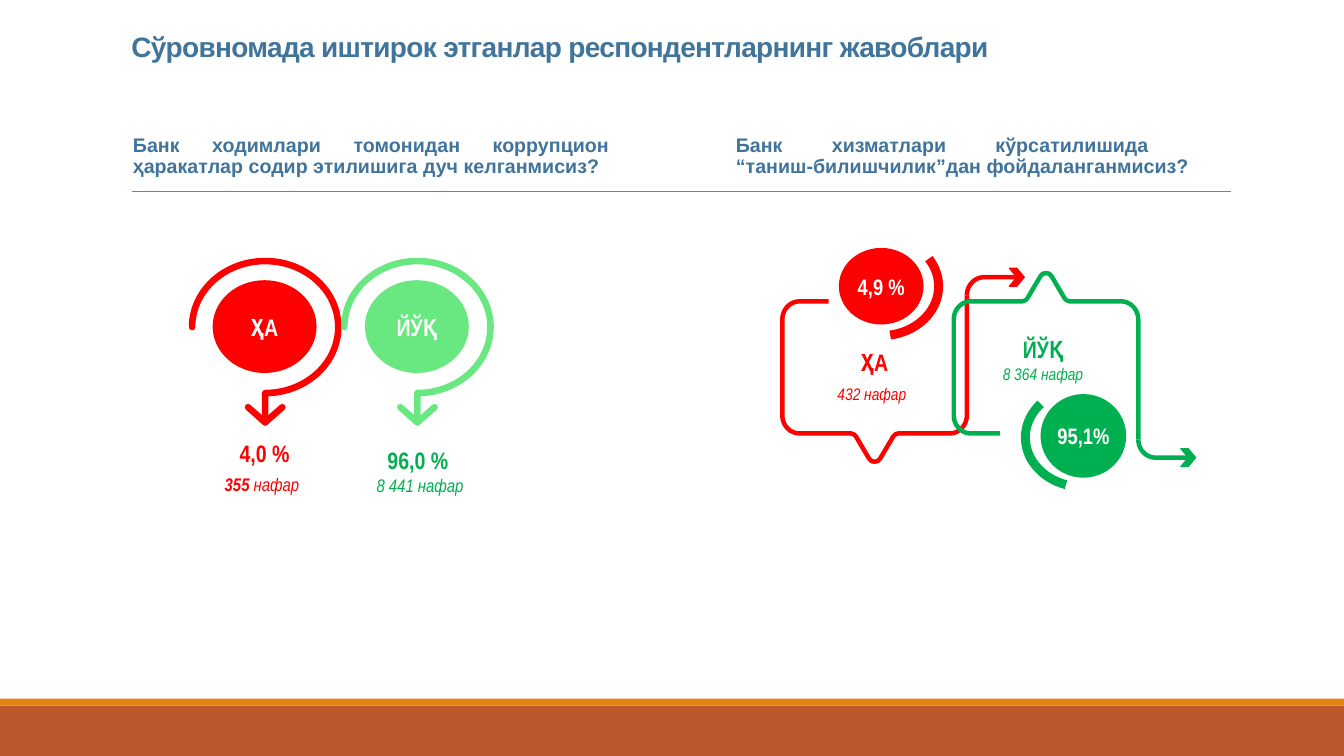
import math
from dataclasses import dataclass

import pptx
import pptx.dml.color
import pptx.enum.shapes
import pptx.enum.text
import pptx.oxml
import pptx.oxml.ns
import pptx.util


@dataclass(frozen=True)
class Theme:
    heading: str = "40749B"
    yes: str = "FF0000"
    no: str = "00B050"
    no_light: str = "69E781"
    white: str = "FFFFFF"
    rule: str = "808080"
    band: str = "BD582C"
    stripe: str = "E48312"
    sans: str = "Arial"
    narrow: str = "Arial Narrow"
    title: float = 20
    question: float = 14
    answer: float = 17
    share: float = 16
    count: float = 13
    count_small: float = 12


theme = Theme()
inch = pptx.util.Inches
rgb = pptx.dml.color.RGBColor.from_string
preset = pptx.enum.shapes.MSO_SHAPE
align = pptx.enum.text.PP_ALIGN
anchor = pptx.enum.text.MSO_ANCHOR

deck = pptx.Presentation()
deck.slide_width, deck.slide_height = inch(13.33), inch(7.5)
W, H = deck.slide_width, deck.slide_height
slide = deck.slides.add_slide(deck.slide_layouts[5])
shapes = slide.shapes


def arc(cx, cy, rx, ry, start, end, steps=24):
    """Points along an ellipse; degrees run clockwise from the right."""
    angles = [math.radians(start + (end - start) * i / steps) for i in range(steps + 1)]
    return [(cx + rx * math.cos(a), cy + ry * math.sin(a)) for a in angles]


def trace(contours, color, width, cap="flat"):
    """Draw open contours, given in inches, as one stroked freeform."""
    contours = [[(inch(x), inch(y)) for x, y in points] for points in contours]
    builder = shapes.build_freeform(*contours[0][0])
    for number, points in enumerate(contours):
        if number:
            builder.move_to(*points[0])
        builder.add_line_segments(points[1:], close=False)
    stroke = builder.convert_to_shape()
    stroke.shadow.inherit = False
    stroke.fill.background()
    stroke.line.color.rgb = rgb(color)
    stroke.line.width = pptx.util.Pt(width)
    stroke._element.spPr.find(pptx.oxml.ns.qn("a:ln")).set("cap", cap)


# Footer bands
for top, height, color in ((14 / 15, 1 / 15, theme.band), (0.924, 0.0093, theme.stripe)):
    band = shapes.add_shape(preset.RECTANGLE, 0, int(H * top), W, int(H * height))
    band.shadow.inherit = False
    band.fill.solid()
    band.fill.fore_color.rgb = rgb(color)
    band.line.fill.background()

# Rule under the questions
rule = shapes.add_connector(pptx.enum.shapes.MSO_CONNECTOR.STRAIGHT,
                            inch(1.31), inch(1.9), inch(12.21), inch(1.9))
rule.line.color.rgb = rgb(theme.rule)
rule.line.width = pptx.util.Pt(0.5)
rule._element.spPr.append(pptx.oxml.parse_xml(
    f'<a:effectLst {pptx.oxml.ns.nsdecls("a")}/>'))

# Title
title = shapes.title
title.left, title.top, title.width, title.height = map(inch, (-0.2, -0.08, 11.5, 0.76))
title.text_frame.auto_size = pptx.enum.text.MSO_AUTO_SIZE.NONE
title.text_frame.vertical_anchor = anchor.BOTTOM
heading = title.text_frame.paragraphs[0]
heading.alignment = align.CENTER
heading.line_spacing = 0.85
heading_run = heading.add_run()
heading_run.text = "Сўровномада иштирок этганлар респондентларнинг жавоблари"
heading_run.font.size = pptx.util.Pt(theme.title)
heading_run.font.name = theme.sans
heading_run.font.bold = True
heading_run.font.color.rgb = rgb(theme.heading)
heading_run._r.get_or_add_rPr().set("spc", "-50")

# Left question: rings that end in a down arrow
ring_x, ring_y, ring_pitch = 2.63, 3.245, 1.51
for column, color in enumerate((theme.yes, theme.no_light)):
    cx = ring_x + column * ring_pitch
    tip = (cx, 4.19)
    ring = arc(cx, ring_y, 0.725, 0.655, 180, 450, 72)
    trace([ring + [tip], [(cx - 0.17, 4.04), tip, (cx + 0.17, 4.04)]], color, 4.7, "rnd")

# Right question: speech frames, the second one shifted and turned upside down
bubble_pitch, mirror_sum = 1.7, 7.29
pointer_x = 8.675
pointer_half = [(8.44, 4.3), (8.47, 4.31), (8.49, 4.33), (8.62, 4.55), (8.645, 4.575)]
pointer = (pointer_half + [(pointer_x, 4.58)]
           + [(2 * pointer_x - x, y) for x, y in reversed(pointer_half)])
frame = ([(8.22, 2.99)] + arc(7.93, 3.17, 0.17, 0.18, 270, 180)
         + arc(7.93, 4.12, 0.17, 0.18, 180, 90) + pointer
         + arc(9.42, 4.12, 0.17, 0.18, 90, 0) + [(9.59, 2.93)])
hook = arc(9.76, 2.93, 0.17, 0.18, 180, 270) + [(10.08, 2.75)]
for column, color in enumerate((theme.yes, theme.no)):
    for part in (frame, hook):
        trace([[(x + column * bubble_pitch, mirror_sum - y if column else y)
                for x, y in part]], color, 3.21)
    arrow_y = mirror_sum - 2.75 if column else 2.75
    arrowhead = shapes.add_shape(preset.CHEVRON, inch(10.01 + column * bubble_pitch),
                                 inch(arrow_y - 0.09), inch(0.15), inch(0.18))
    arrowhead.adjustments[0] = 0.5
    arrowhead.shadow.inherit = False
    arrowhead.fill.solid()
    arrowhead.fill.fore_color.rgb = rgb(color)
    arrowhead.line.color.rgb = rgb(color)
    arrowhead.line.width = pptx.util.Pt(0.75)

# Arcs beside the share discs
trace([arc(8.74, 2.84, 0.57, 0.49, -34, 81)], theme.yes, 6.42)
trace([arc(10.74, 4.34, 0.57, 0.49, 107, 223)], theme.no, 6.42)

# Discs: left, top, width, height, fill, text, size
discs = [
    (2.11, 2.78, 1.03, 0.92, theme.yes, "ҲА", theme.answer),
    (2.11 + ring_pitch, 2.78, 1.03, 0.92, theme.no_light, "ЙЎҚ", theme.answer),
    (8.32, 2.46, 0.84, 0.76, theme.yes, "4,9 %", theme.share),
    (10.32, 3.91, 0.85, 0.83, theme.no, "95,1%", theme.share),
]

# Texts: box, fill, font, colour, alignment, paragraphs of (text, size, style) runs
BREAK = ("\n", 0, "")
texts = [
    ((1.22, 1.09, 4.92, 0.93), None, theme.sans, theme.heading, align.JUSTIFY,
     [[("Банк ходимлари томонидан коррупцион ҳаракатлар содир этилишига дуч келганмисиз?",
        theme.question, "b")]]),
    ((7.2, 0.98, 4.78, 1.15), None, theme.sans, theme.heading, align.JUSTIFY,
     [[("Банк хизматлари кўрсатилишида ", theme.question, "b"), BREAK,
       ("“таниш-билишчилик”дан фойдаланганмисиз?", theme.question, "b")]]),
    ((1.81, 4.43, 1.63, 0.41), None, theme.narrow, theme.yes, align.CENTER,
     [[("4,0 %", theme.answer, "b"), BREAK, ("355", theme.count, "bi"),
       (" нафар", theme.count, "i"), (" ", theme.answer, "b")]]),
    ((3.33, 4.43, 1.63, 0.49), None, theme.narrow, theme.no, align.CENTER,
     [[("96,0 %", theme.answer, "b"), BREAK, (" 8 441 нафар", theme.count, "i")]]),
    ((7.76, 3.46, 1.83, 0.55), None, theme.narrow, theme.yes, align.CENTER,
     [[("ҲА", theme.answer, "b")],
      [("432 нафар", theme.count_small, "i"), (" ", theme.answer, "b")]]),
    ((9.43, 3.29, 1.83, 0.55), None, theme.narrow, theme.no, align.CENTER,
     [[("ЙЎҚ", theme.answer, "b")], [("8 364 нафар", theme.count_small, "i")]]),
]
texts += [(box, fill, theme.narrow, theme.white, align.CENTER, [[(words, size, "b")]])
          for *box, fill, words, size in discs]

for box, fill, font, color, alignment, paragraphs in texts:
    place = [inch(length) for length in box]
    if fill:
        label = shapes.add_shape(preset.OVAL, *place)
        label.shadow.inherit = False
        label.fill.solid()
        label.fill.fore_color.rgb = rgb(fill)
        label.line.fill.background()
    else:
        label = shapes.add_textbox(*place)
    words = label.text_frame
    words.word_wrap = not fill
    words.vertical_anchor = anchor.MIDDLE
    if font == theme.narrow:
        inset = 0 if fill else inch(0.1)
        words.margin_left = words.margin_right = inset
        words.margin_top = words.margin_bottom = inset
    for number, runs in enumerate(paragraphs):
        line = words.add_paragraph() if number else words.paragraphs[0]
        line.alignment = alignment
        if alignment == align.JUSTIFY:
            line.line_spacing = 0.9
        for content, size, style in runs:
            if content == "\n":
                line.add_line_break()
                continue
            run = line.add_run()
            run.text = content
            run.font.name = font
            run.font.size = pptx.util.Pt(size)
            run.font.bold = "b" in style
            run.font.italic = "i" in style
            run.font.color.rgb = rgb(color)

deck.save("out.pptx")
